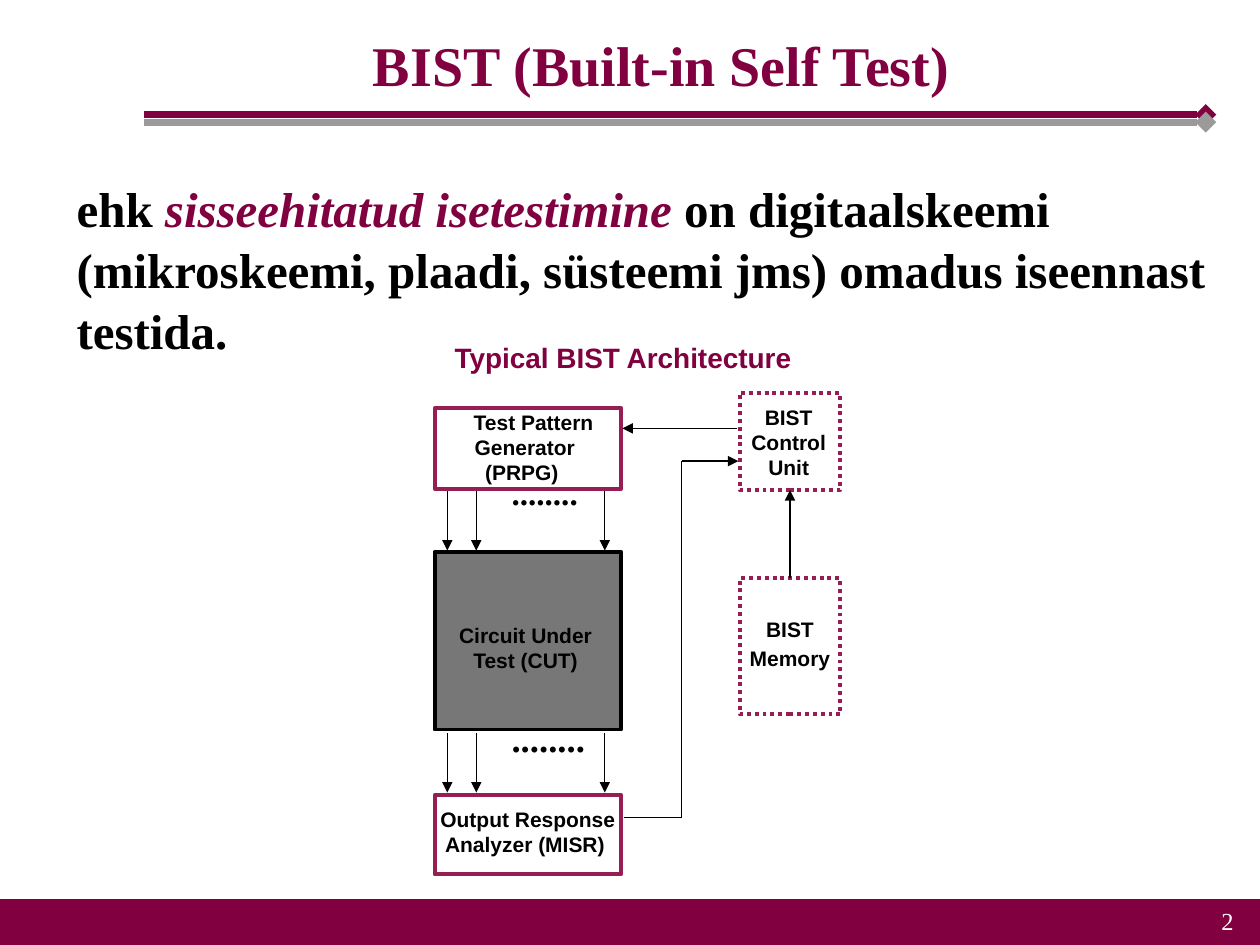
from pptx import Presentation
from pptx.dml.color import RGBColor
from pptx.enum.dml import MSO_LINE
from pptx.enum.shapes import MSO_CONNECTOR, MSO_SHAPE
from pptx.enum.text import MSO_ANCHOR, PP_ALIGN
from pptx.oxml.ns import qn
from pptx.util import Emu, Inches, Pt
from lxml import etree

LEFT, MID, RIGHT = PP_ALIGN.LEFT, PP_ALIGN.CENTER, PP_ALIGN.RIGHT
TOP, CENTER = MSO_ANCHOR.TOP, MSO_ANCHOR.MIDDLE
DOTS = MSO_LINE.ROUND_DOT
RECT, STRAIGHT = MSO_SHAPE.RECTANGLE, MSO_CONNECTOR.STRAIGHT

COLORS = {
    "wine": "800040", "edge": "971E53", "gray": "9B9A98",
    "core": "777777", "black": "000000", "white": "FFFFFF",
}
SERIF, SANS = "Times New Roman", "Arial"
COLS, ROWS = 100, 75          # grid of the 10 x 7.5 inch slide
PAD = (1, 0.5, 1, 0.5)        # text insets in grid cells
WIDE = (1.7, 0.9, 1.7, 0.9)


class Deck:
    def __init__(self):
        self.prs = Presentation()
        self.prs.slide_width, self.prs.slide_height = Inches(10), Inches(7.5)
        self.slide = self.prs.slides.add_slide(self.prs.slide_layouts[6])
        self.shapes = self.slide.shapes

    def x(self, col):
        return Emu(round(self.prs.slide_width * col / COLS))

    def y(self, row):
        return Emu(round(self.prs.slide_height * row / ROWS))

    def area(self, box):
        col, row, wide, high = box
        return self.x(col), self.y(row), self.x(wide), self.y(high)

    def color(self, name):
        return RGBColor.from_string(COLORS[name])

    def box(self, box, edge, fill=None, width=2.25, dash=None):
        shape = self.shapes.add_shape(RECT, *self.area(box))
        shape.shadow.inherit = False
        if fill:
            shape.fill.solid()
            shape.fill.fore_color.rgb = self.color(fill)
        else:
            shape.fill.background()
        shape.line.color.rgb = self.color(edge)
        shape.line.width = Pt(width)
        if dash:
            shape.line.dash_style = dash
        return shape

    def line(self, start, end, color="black", width=0.75, head=None,
             source=None, target=None):
        link = self.shapes.add_connector(
            STRAIGHT, self.x(start[0]), self.y(start[1]),
            self.x(end[0]), self.y(end[1]))
        if source:
            link.begin_connect(*source)
        if target:
            link.end_connect(*target)
        link.line.color.rgb = self.color(color)
        link.line.width = Pt(width)
        if head:
            tip = etree.SubElement(link.line._get_or_add_ln(), qn("a:tailEnd"))
            tip.set("type", head)
        etree.SubElement(link._element.spPr, qn("a:effectLst"))

    def text(self, box, paras, **style):
        self.fill(self.shapes.add_textbox(*self.area(box)), paras, **style)

    def fill(self, shape, paras, size=12, font=SANS, color="black", bold=True,
             align=MID, anchor=TOP, pad=PAD, gap=0, space=None, indent=0):
        """Each paragraph is a string or a list of (text, color, italic) runs."""
        frame = shape.text_frame
        frame.word_wrap = True
        frame.vertical_anchor = anchor
        frame.margin_left, frame.margin_right = self.x(pad[0]), self.x(pad[2])
        frame.margin_top, frame.margin_bottom = self.y(pad[1]), self.y(pad[3])
        for i, para in enumerate(paras):
            p = frame.add_paragraph() if i else frame.paragraphs[0]
            p.alignment = align
            if i and gap:
                p.space_before = Pt(gap)
            if space:
                p.line_spacing = space
            if indent:
                p._p.get_or_add_pPr().set("indent", str(self.x(indent)))
            runs = [(para, color, False)] if isinstance(para, str) else para
            for words, tint, slant in runs:
                r = p.add_run()
                r.text = words
                r.font.name, r.font.size = font, Pt(size)
                r.font.bold, r.font.italic = bold, slant
                r.font.color.rgb = self.color(tint)


def main():
    deck = Deck()

    # Double rule and footer
    for row, tint in ((9.1, "wine"), (9.7, "gray")):
        deck.line((11.4, row), (95.7, row), tint, 4, "diamond")
    deck.box((0, 71.4, 100, 3.6), "wine", "wine", 0.75)
    deck.text((86.2, 71.4, 12.7, 3.6), ["2"], size=14, font=SERIF,
              color="white", bold=False, align=RIGHT)

    # Title and definition
    deck.text((7.5, 0, 90, 10.1), ["BIST (Built-in Self Test)"], size=32,
              font=SERIF, color="wine", anchor=CENTER)
    deck.text((5.1, 13.5, 92.4, 18.5), [[
        ("ehk ", "black", False),
        ("sisseehitatud isetestimine ", "wine", True),
        ("on digitaalskeemi (mikroskeemi, plaadi, süsteemi jms) "
         "omadus iseennast testida.", "black", False),
    ]], size=28, font=SERIF, align=LEFT, space=1.04)
    deck.text((34.3, 26.5, 30.3, 3.7), ["Typical BIST Architecture"],
              size=16, color="wine")

    # Main column: generator, circuit, analyzer
    left, wide = 34.5, 14.8
    for row, high, edge, fill in ((32.4, 6.4, "edge", None),
                                  (43.8, 14.1, "black", "core"),
                                  (63.1, 6.3, "edge", None)):
        deck.box((left, row, wide, high), edge, fill)
    deck.text((33.1, 32.1, 17.1, 7.3), ["Test Pattern Generator (PRPG) "],
              pad=(1.7, 0.4, 1.7, 0.9), indent=1.4)
    deck.text((31.1, 48.5, 21.7, 5.7), ["Circuit Under ", "Test (CUT) "],
              pad=WIDE)
    deck.text((32.2, 63.1, 19.4, 7.1),
              ["Output Response", "Analyzer (MISR) "], pad=WIDE)

    # Signal bundles between the blocks
    for row, label, size in ((39, 36.6, 19), (58.2, 55.9, 21)):
        for col in (35.5, 37.8, 48):
            deck.line((col, row), (col, row + 4.7), head="triangle")
        deck.text((38.9, label, 12.6, 7.1), ["........"], size=size,
                  font=SERIF, align=LEFT, pad=WIDE)

    # Control unit and memory
    unit = deck.box((58.7, 31.2, 8, 7.7), "edge", dash=DOTS)
    deck.text((56.3, 31.2, 12.6, 7.1), ["BIST", "Control Unit"], pad=WIDE)
    memory = deck.box((58.7, 45.9, 8, 10.8), "edge", dash=DOTS)
    deck.fill(memory, ["BIST", "Memory"], pad=(0, 3, 0, 0.5), gap=2.5)
    deck.line((62.7, 45.9), (62.7, 38.9), head="triangle",
              source=(memory, 0), target=(unit, 2))

    # Control and response paths
    deck.line((58.5, 34), (49.4, 34), head="triangle")
    bend = 54.1
    deck.line((bend, 36.6), (bend, 64.9))
    deck.line((bend, 36.6), (58.6, 36.6), head="triangle")
    deck.line((bend, 64.9), (49.5, 64.9))

    deck.prs.save("out.pptx")


if __name__ == "__main__":
    main()
